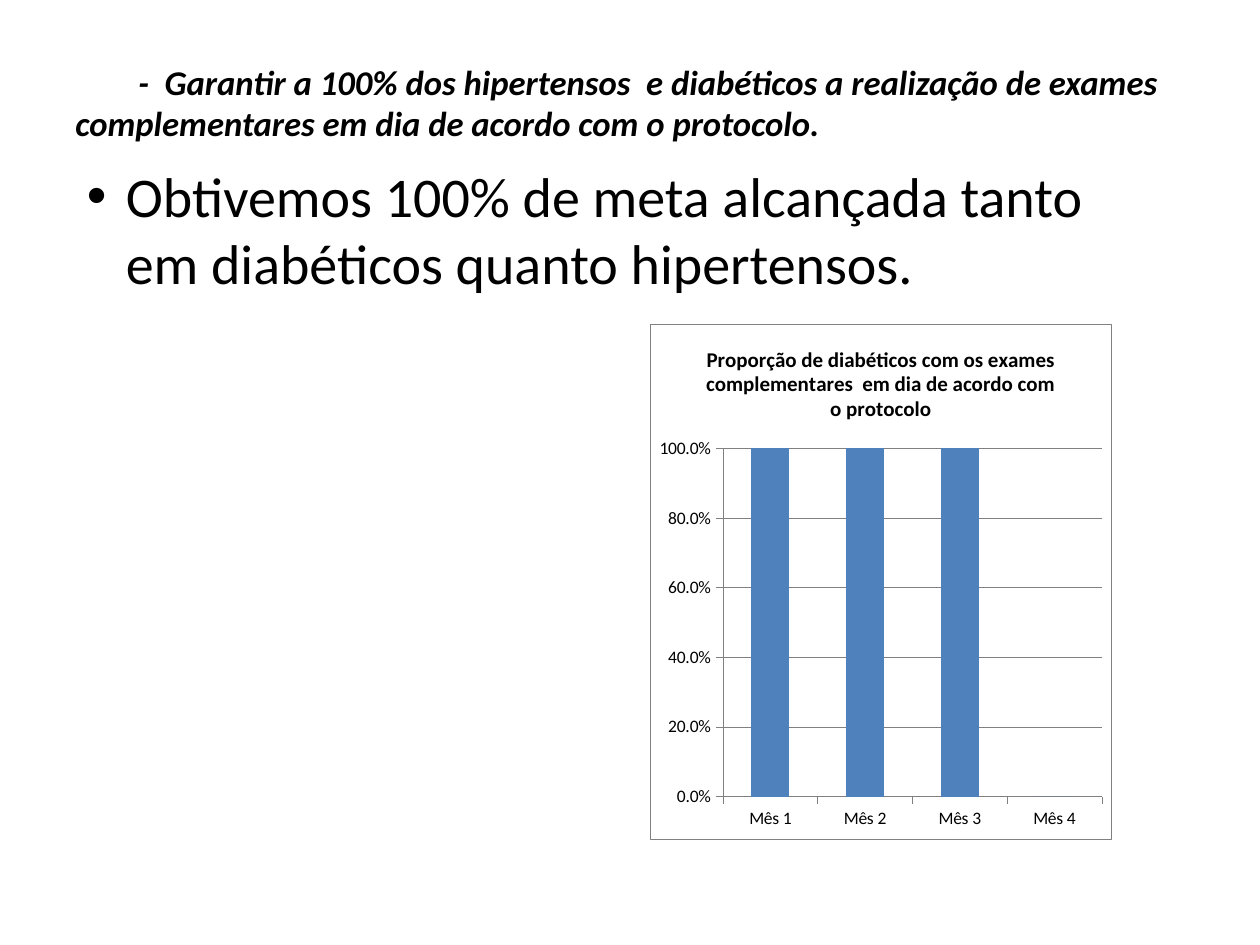
from lxml import etree
from pptx import Presentation
from pptx.chart.data import CategoryChartData
from pptx.dml.color import RGBColor
from pptx.enum.chart import XL_CHART_TYPE, XL_TICK_MARK
from pptx.enum.text import MSO_ANCHOR
from pptx.oxml import parse_xml
from pptx.oxml.ns import nsdecls, qn
from pptx.util import Inches, Pt

COLUMN = XL_CHART_TYPE.COLUMN_CLUSTERED
OUTSIDE = XL_TICK_MARK.OUTSIDE
TOP, MIDDLE = MSO_ANCHOR.TOP, MSO_ANCHOR.MIDDLE
FONT = "Calibri"
COLORS = {"text": "000000", "bar": "4F81BD", "line": "808080", "paper": "FFFFFF"}
CHART_TITLE = ("Proporção de diabéticos com os exames complementares  "
               "em dia de acordo com o protocolo")


def rgb(name):
    """Return the named colour."""
    return RGBColor.from_string(COLORS[name])


def style_font(font, size, bold=False, italic=False):
    """Set typeface, size, weight and colour of a font."""
    font.name, font.size = FONT, Pt(size)
    font.bold, font.italic = bold, italic
    font.color.rgb = rgb("text")


def style_line(line):
    """Give a line the thin grey of the chart."""
    line.color.rgb = rgb("line")
    line.width = Pt(0.25)


def add_text(s, text, box, size, bold=False, italic=False, anchor=TOP, bottom=0.05, bullet=False):
    """Add a wrapped text box, optionally bulleted."""
    sp = s.shapes.add_textbox(*(Inches(v) for v in box))
    tf = sp.text_frame
    tf.word_wrap = True
    tf.vertical_anchor = anchor
    tf.margin_bottom = Inches(bottom)
    p = tf.paragraphs[0]
    r = p.add_run()
    r.text = text
    style_font(r.font, size, bold, italic)
    if bullet:
        pPr = p._p.get_or_add_pPr()
        pPr.set("marL", str(Inches(0.31)))
        pPr.set("indent", str(-Inches(0.31)))
        etree.SubElement(pPr, qn("a:buFont")).set("typeface", "Arial")
        etree.SubElement(pPr, qn("a:buChar")).set("char", "•")


def style_area(parent, successors, border):
    """Fill a chart area with the paper colour and set its border."""
    fill = f'<a:solidFill><a:srgbClr val="{COLORS["paper"]}"/></a:solidFill>'
    stroke = f'<a:solidFill><a:srgbClr val="{COLORS["line"]}"/></a:solidFill>' if border else "<a:noFill/>"
    spPr = parse_xml(f'<c:spPr {nsdecls("c", "a")}>{fill}<a:ln w="{Pt(0.25)}">{stroke}</a:ln></c:spPr>')
    following = [e for e in parent if e.tag in map(qn, successors)]
    if following:
        following[0].addprevious(spPr)
    else:
        parent.append(spPr)


def style_axis(axis):
    """Set tick marks, label font and line of an axis."""
    axis.major_tick_mark = OUTSIDE
    style_font(axis.tick_labels.font, 10)
    style_line(axis.format.line)


def add_column_chart(s, categories, values, box):
    """Add the titled percentage column chart."""
    data = CategoryChartData(number_format="0.0%")
    data.categories = categories
    data.add_series(CHART_TITLE, values)
    chart = s.shapes.add_chart(COLUMN, *(Inches(v) for v in box), data).chart
    style_font(chart.font, 10)
    chart.has_legend = False
    chart.has_title = True
    r = chart.chart_title.text_frame.paragraphs[0].add_run()
    r.text = CHART_TITLE
    style_font(r.font, 12, bold=True)
    chart.chart_title.include_in_layout = False

    plot = chart.plots[0]
    plot.gap_width = 150
    plot.vary_by_categories = False
    fill = plot.series[0].format.fill
    fill.solid()
    fill.fore_color.rgb = rgb("bar")

    style_axis(chart.category_axis)
    axis = chart.value_axis
    style_axis(axis)
    axis.minimum_scale, axis.maximum_scale, axis.major_unit = 0, 1, 0.2
    axis.tick_labels.number_format = "0.0%"
    axis.tick_labels.number_format_is_linked = False
    axis.has_major_gridlines = True
    style_line(axis.major_gridlines.format.line)

    space = chart._chartSpace
    style_area(space, ("c:txPr", "c:externalData"), border=True)
    style_area(space.chart.plotArea, ("c:extLst",), border=False)


def main():
    """Build the slide and save it."""
    prs = Presentation()
    prs.slide_width, prs.slide_height = Inches(10), Inches(7.5)
    s = prs.slides.add_slide(prs.slide_layouts[6])
    add_text(s, "\t-  Garantir a 100% dos hipertensos  e diabéticos a realização de exames "
                "complementares em dia de acordo com o protocolo.",
             (0.5, 0.3, 9, 1.25), 19.8, bold=True, italic=True, anchor=MIDDLE, bottom=0.28)
    add_column_chart(s, [f"Mês {n}" for n in range(1, 5)], (1, 1, 1, 0), (5.16, 2.57, 3.66, 4.09))
    add_text(s, "Obtivemos 100% de meta alcançada tanto em diabéticos quanto hipertensos.",
             (0.59, 1.23, 8.11, 1.48), 32, bullet=True)
    prs.save("out.pptx")


if __name__ == "__main__":
    main()
